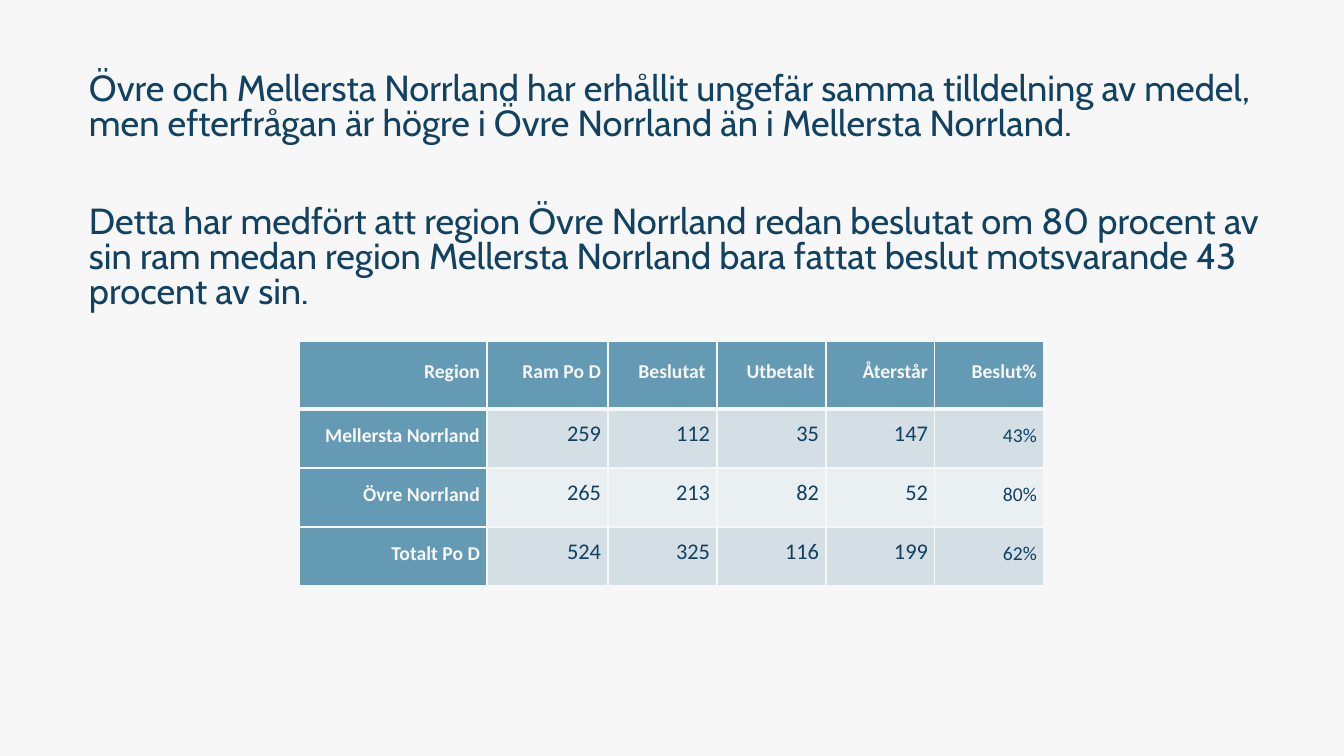
from lxml.etree import SubElement as sub
from pptx import Presentation
from pptx.dml.color import RGBColor
from pptx.enum.text import MSO_ANCHOR as Anchor, PP_ALIGN as Align
from pptx.oxml.ns import qn
from pptx.util import Emu, Pt

TEXT = [
    "Övre och Mellersta Norrland har erhållit ungefär samma tilldelning av medel, "
    "men efterfrågan är högre i Övre Norrland än i Mellersta Norrland.",
    "Detta har medfört att region Övre Norrland redan beslutat om 80 procent av "
    "sin ram medan region Mellersta Norrland bara fattat beslut motsvarande 43 "
    "procent av sin.",
]
ROWS = [
    ("Region", "Ram Po D", "Beslutat ", "Utbetalt ", "Återstår", "Beslut%"),
    ("Mellersta Norrland", "259", "112", "35", "147", "43%"),
    ("Övre Norrland", "265", "213", "82", "52", "80%"),
    ("Totalt Po D", "524", "325", "116", "199", "62%"),
]
WIDTHS = [188, 121, 109, 109, 109, 109]
HEIGHTS = [68, 59, 59, 59]
TEXT_BOX = (79, 69, 1219, 272)
TABLE_AT = (299, 341)

PAPER, NAVY, INK, BLUE = "F8F7F7", "124261", "104161", "649AB3"
BANDS = ["EAEFF2", "D3DEE5"]


def px(n):
    return Emu(round(n * 914400 / 100.8))


def color(code):
    return RGBColor.from_string(code)


def style(para, face, size, code, bold=False):
    font = para.runs[0].font
    font.name, font.size, font.bold = face, Pt(size), bold
    font.color.rgb = color(code)


def border(cell, side, width):
    line = sub(cell._tc.get_or_add_tcPr(), qn("a:ln" + side), w=str(Pt(width)))
    sub(sub(line, qn("a:solidFill")), qn("a:srgbClr"), val=PAPER)


def add_text(slide):
    frame = slide.shapes.add_textbox(*map(px, TEXT_BOX)).text_frame
    frame.word_wrap = True
    frame.text = "\n".join(TEXT)
    for i, para in enumerate(frame.paragraphs):
        para.line_spacing = 0.8
        para.space_before = Pt(45 if i else 0)
        style(para, "Cabin", 25.9, NAVY)


def fill_cell(cell, text, r, c):
    head = r == 0 or c == 0
    for side in "LRTB":
        thick = (r, side) in ((0, "B"), (1, "T"))
        border(cell, side, 3 if thick else 1)
    cell.fill.solid()
    cell.fill.fore_color.rgb = color(BLUE if head else BANDS[r % 2])
    cell.margin_left = cell.margin_right = px(7)
    cell.margin_top = cell.margin_bottom = 0
    cell.vertical_anchor = Anchor.MIDDLE
    cell.text_frame.text = text
    para = cell.text_frame.paragraphs[0]
    para.alignment = Align.RIGHT
    para.line_spacing = para.space_after = Pt(13)
    small = head or text.endswith("%")
    style(para, "Calibri", 14 if small else 16, PAPER if head else INK, head)


def add_grid(slide):
    size = (sum(WIDTHS), sum(HEIGHTS))
    table = slide.shapes.add_table(
        len(ROWS), len(WIDTHS), *map(px, TABLE_AT + size)).table
    table.first_col = True
    for col, width in zip(table.columns, WIDTHS):
        col.width = px(width)
    for row, height in zip(table.rows, HEIGHTS):
        row.height = px(height)
    for r, row in enumerate(ROWS):
        for c, text in enumerate(row):
            fill_cell(table.cell(r, c), text, r, c)


def main():
    deck = Presentation()
    deck.slide_width, deck.slide_height = px(1344), px(756)
    slide = deck.slides.add_slide(deck.slide_layouts[6])
    slide.background.fill.solid()
    slide.background.fill.fore_color.rgb = color(PAPER)
    add_text(slide)
    add_grid(slide)
    deck.save("out.pptx")


if __name__ == "__main__":
    main()
